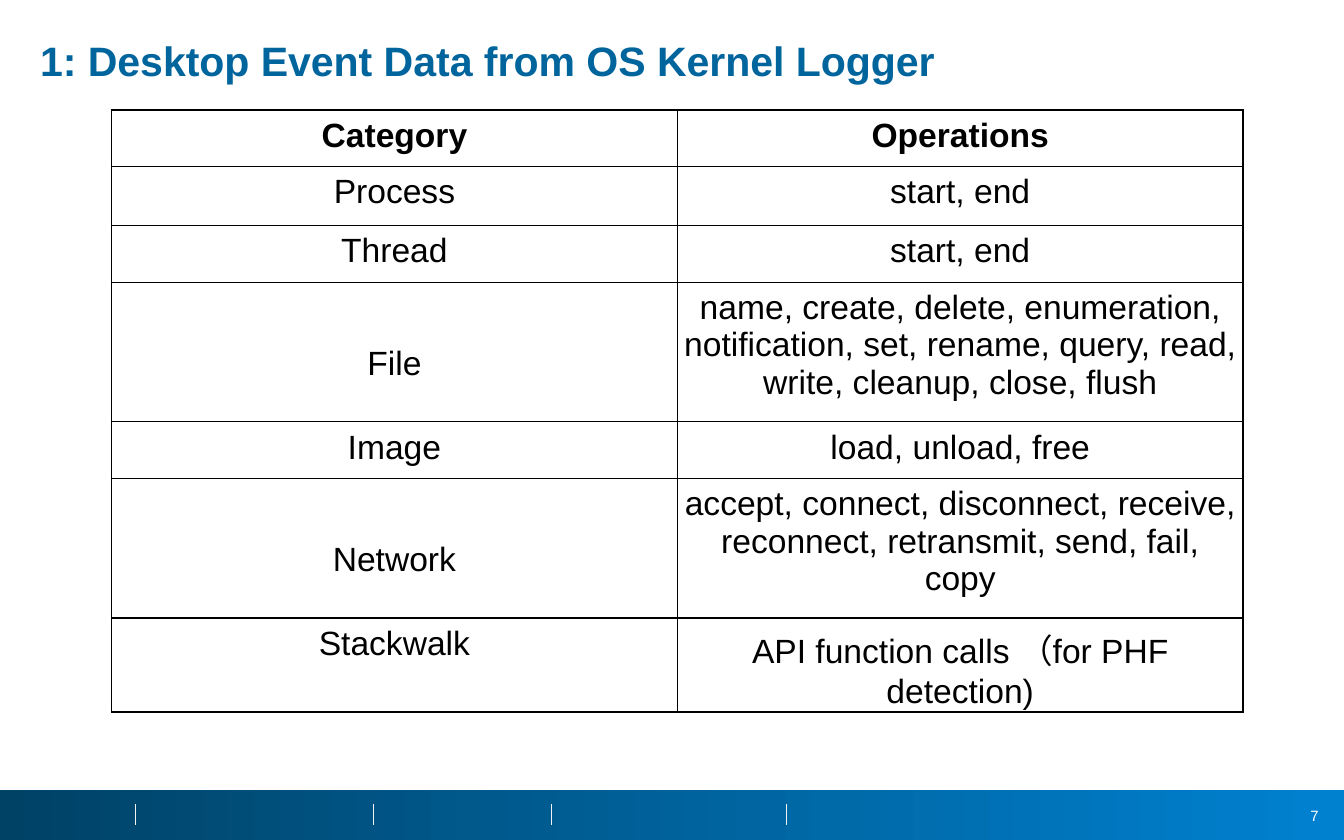
from dataclasses import dataclass

from lxml import etree
from pptx import Presentation
from pptx import util as u
from pptx.dml.color import RGBColor
from pptx.enum import shapes, text
from pptx.oxml import ns

PX = 9144  # one px is a hundredth of an inch


@dataclass(frozen=True)
class Theme:
    font: str = "Arial"
    title: str = "00649D"
    ink: str = "000000"
    paper: str = "FFFFFF"
    tick: str = "F2F2F2"
    bar_start: str = "004266"
    bar_end: str = "0081D0"
    title_size: int = 22
    table_size: int = 18
    number_size: int = 8
    outer_border: float = 1
    inner_border: float = 0.75


THEME = Theme()

# Category, operations, row height
EVENTS = [
    ("Category", "Operations", 42),
    ("Process", "start, end", 44),
    ("Thread", "start, end", 42),
    ("File", "name, create, delete, enumeration, notification, set, rename, "
             "query, read, write, cleanup, close, flush", 104),
    ("Image", "load, unload, free", 42),
    ("Network", "accept, connect, disconnect, receive, reconnect, retransmit, "
                "send, fail, copy", 104),
    ("Stackwalk", "API function calls （for PHF detection)", 68),
]
TALL_ROW = 104


def px(*lengths):
    return [u.Emu(length * PX) for length in lengths]


def color(code):
    return RGBColor.from_string(code)


def write(frame, words, *, size, ink=THEME.ink, bold=False,
          align=text.PP_ALIGN.LEFT, spacing=None):
    frame.word_wrap = True
    paragraph = frame.paragraphs[0]
    paragraph.alignment = align
    if spacing:
        paragraph.line_spacing = spacing
    run = paragraph.add_run()
    run.text = words
    run.font.name = THEME.font
    run.font.size = u.Pt(size)
    run.font.bold = bold
    run.font.color.rgb = color(ink)


def add_label(slide, place, words, anchor=text.MSO_ANCHOR.TOP, **style):
    frame = slide.shapes.add_textbox(*px(*place)).text_frame
    frame.vertical_anchor = anchor
    write(frame, words, **style)


def add_footer_bar(slide):
    bar = slide.shapes.add_shape(shapes.MSO_SHAPE.RECTANGLE, *px(0, 588, 1000, 37))
    bar.shadow.inherit = False
    bar.line.fill.background()
    bar.fill.gradient()
    bar.fill.gradient_angle = 0
    for stop, code in zip(bar.fill.gradient_stops, (THEME.bar_start, THEME.bar_end)):
        stop.color.rgb = color(code)


def add_tick(slide, x):
    tick = slide.shapes.add_connector(
        shapes.MSO_CONNECTOR.STRAIGHT, *px(x, 598, x, 614))
    tick.line.color.rgb = color(THEME.tick)
    tick.line.width = u.Pt(0.25)
    etree.SubElement(tick.element.spPr, ns.qn("a:effectLst"))


def set_borders(cell, outer_sides):
    properties = cell._tc.get_or_add_tcPr()
    for index, side in enumerate(("lnL", "lnR", "lnT", "lnB")):
        width = THEME.outer_border if side in outer_sides else THEME.inner_border
        border = etree.Element(ns.qn(f"a:{side}"), w=str(u.Pt(width)))
        fill = etree.SubElement(border, ns.qn("a:solidFill"))
        etree.SubElement(fill, ns.qn("a:srgbClr"), val=THEME.ink)
        properties.insert(index, border)  # borders come before the cell fill


def add_event_table(slide):
    table = slide.shapes.add_table(len(EVENTS), 2, *px(83, 82, 842, 446)).table
    for column in table.columns:
        column.width = px(421)[0]
    for row, (*entries, height) in enumerate(EVENTS):
        table.rows[row].height = px(height)[0]
        for col, words in enumerate(entries):
            cell = table.cell(row, col)
            cell.fill.solid()
            cell.fill.fore_color.rgb = color(THEME.paper)
            (cell.margin_left, cell.margin_right,
             cell.margin_top, cell.margin_bottom) = px(5, 5, 5, 5)
            outer = {"lnR" if col else "lnL"}
            if row == 0:
                outer.add("lnT")
            if row == len(EVENTS) - 1:
                outer.add("lnB")
            set_borders(cell, outer)
            # Categories beside long lists drop down by their line spacing
            drop = 2.5 if col == 0 and height == TALL_ROW else None
            write(cell.text_frame, words, size=THEME.table_size, bold=row == 0,
                  align=text.PP_ALIGN.CENTER, spacing=drop)


def main():
    deck = Presentation()
    deck.slide_width, deck.slide_height = px(1000, 625)
    slide = deck.slides.add_slide(deck.slide_layouts[6])

    # Footer
    add_footer_bar(slide)
    add_label(slide, (949, 595, 42, 24), "7", text.MSO_ANCHOR.MIDDLE,
              size=THEME.number_size, ink=THEME.paper, align=text.PP_ALIGN.RIGHT)
    for x in (101, 278, 410, 585):
        add_tick(slide, x)

    # Title and event table
    add_label(slide, (20, 26, 959, 62), "1: Desktop Event Data from OS Kernel Logger",
              size=THEME.title_size, ink=THEME.title, bold=True, spacing=0.9)
    add_event_table(slide)
    deck.save("out.pptx")


if __name__ == "__main__":
    main()
